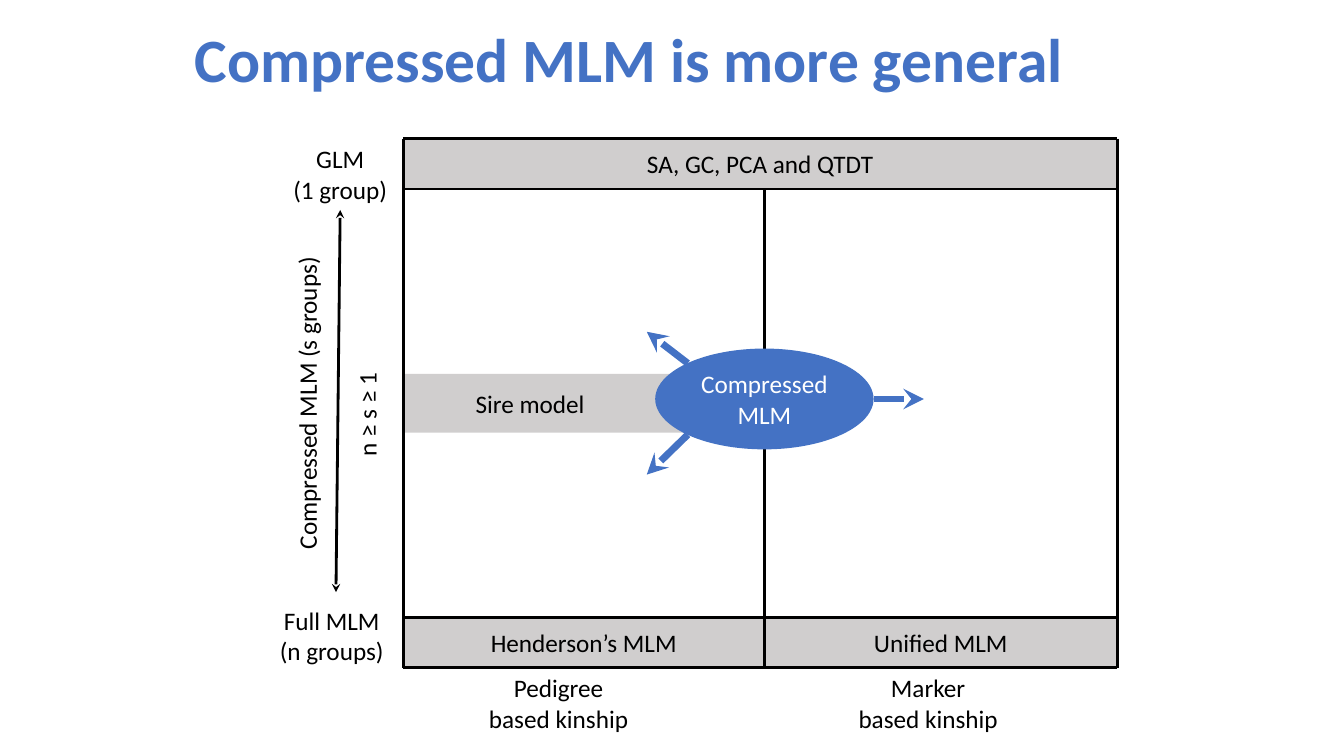
import pptx
import pptx.util
import pptx.dml.color
import pptx.enum.shapes
import pptx.enum.text
import pptx.oxml
import pptx.oxml.ns

RGB = pptx.dml.color.RGBColor
SHAPE = pptx.enum.shapes.MSO_SHAPE
ALIGN = pptx.enum.text.PP_ALIGN
ANCHOR = pptx.enum.text.MSO_ANCHOR

BLACK = RGB(0x00, 0x00, 0x00)
WHITE = RGB(0xFF, 0xFF, 0xFF)
GREY = RGB(0xD0, 0xCE, 0xCE)
BLUE = RGB(0x44, 0x72, 0xC4)
FONT = "Calibri"
EMU_PER_PX = 9525

# Edges of the model grid, in px
LEFT, SPLIT, RIGHT = 384, 728, 1064
TOP, HEADER, FOOTER, BOTTOM = 132, 180, 588, 636

TITLE = ("Compressed MLM is more general", (176, 0, 944, 120))
SIRE_INDENT = 69
SIRE_MODEL = ("Sire model", (LEFT, 356, SPLIT - LEFT, 56))
MODEL_BARS = [
    ("SA, GC, PCA and QTDT", (LEFT, TOP, RIGHT - LEFT, HEADER - TOP)),
    ("Henderson’s MLM", (LEFT, FOOTER, SPLIT - LEFT, BOTTOM - FOOTER)),
    ("Unified MLM", (SPLIT, FOOTER, RIGHT - SPLIT, BOTTOM - FOOTER)),
]
COMPRESSED_MLM = ("Compressed MLM", (624, 332, 208, 96))
AXIS_LABELS = [  # text, box, rotation
    ("GLM\n(1 group)", (256, TOP, 136, 68), 0),
    ("Full MLM\n(n groups)", (240, 572, 152, 68), 0),
    ("Pedigree\nbased kinship", (LEFT, BOTTOM, 296, 68), 0),
    ("Marker\nbased kinship", (736, BOTTOM, 296, 68), 0),
    ("Compressed MLM (s groups)", (104, 365, 376, 38), 270),
    ("n ≥ s ≥ 1", (173, 376, 352, 38), 270),
]
GROUP_AXIS = (324, 200, 320, 564)
GENERALISATIONS = [
    (655, 346, 616, 316),
    (655, 414, 616, 452),
    (832, 380, 880, 380),
]


def px(*lengths):
    return [pptx.util.Emu(length * EMU_PER_PX) for length in lengths]


def write(frame, text, color=BLACK, size=18, bold=False, align=ALIGN.CENTER):
    frame.word_wrap = True
    frame.text = text
    for paragraph in frame.paragraphs:
        paragraph.alignment = align
        for run in paragraph.runs:
            run.font.name = FONT
            run.font.size = pptx.util.Pt(size)
            run.font.bold = bold
            run.font.color.rgb = color


def add_model(slide, kind, text, box, fill, color=BLACK, align=ALIGN.CENTER):
    model = slide.shapes.add_shape(kind, *px(*box))
    model.shadow.inherit = False
    model.fill.solid()
    model.fill.fore_color.rgb = fill
    model.line.fill.background()
    model.text_frame.vertical_anchor = ANCHOR.MIDDLE
    write(model.text_frame, text, color, align=align)
    return model


def add_label(slide, text, box, rotation=0, **style):
    label = slide.shapes.add_textbox(*px(*box))
    label.rotation = rotation
    write(label.text_frame, text, **style)
    return label


def add_line(slide, ends, color=BLACK, width=2, arrowheads=()):
    """Draw a straight line; arrowheads lists headEnd and/or tailEnd."""
    line = slide.shapes.add_connector(
        pptx.enum.shapes.MSO_CONNECTOR.STRAIGHT, *px(*ends))
    line.line.color.rgb = color
    line.line.width = pptx.util.Pt(width)
    outline = line.line._get_or_add_ln()
    for end in arrowheads:
        outline.append(pptx.oxml.parse_xml(
            f'<a:{end} {pptx.oxml.ns.nsdecls("a")} type="stealth"/>'))
    outline.getparent().append(pptx.oxml.parse_xml(
        f'<a:effectLst {pptx.oxml.ns.nsdecls("a")}/>'))


def main():
    deck = pptx.Presentation()
    deck.slide_width, deck.slide_height = px(1280, 720)
    slide = deck.slides.add_slide(deck.slide_layouts[6])

    title = add_label(slide, *TITLE, color=BLUE, size=44, bold=True,
                      align=ALIGN.LEFT)
    title.text_frame.vertical_anchor = ANCHOR.MIDDLE
    title.text_frame.paragraphs[0].line_spacing = 0.9

    for text, box in MODEL_BARS:
        add_model(slide, SHAPE.RECTANGLE, text, box, GREY)
    sire = add_model(slide, SHAPE.RECTANGLE, *SIRE_MODEL, GREY,
                     align=ALIGN.LEFT)
    sire.text_frame.margin_left = px(SIRE_INDENT)[0]

    for label in AXIS_LABELS:
        add_label(slide, *label)
    add_line(slide, GROUP_AXIS, arrowheads=("headEnd", "tailEnd"))

    for y in (TOP, HEADER, FOOTER, BOTTOM):
        add_line(slide, (RIGHT, y, LEFT, y))
    for x, start in ((LEFT, TOP), (SPLIT, HEADER), (RIGHT, TOP)):
        add_line(slide, (x, start, x, BOTTOM))

    add_model(slide, SHAPE.OVAL, *COMPRESSED_MLM, BLUE, WHITE)
    for ends in GENERALISATIONS:
        add_line(slide, ends, BLUE, 5, ("tailEnd",))

    deck.save("out.pptx")


if __name__ == "__main__":
    main()
